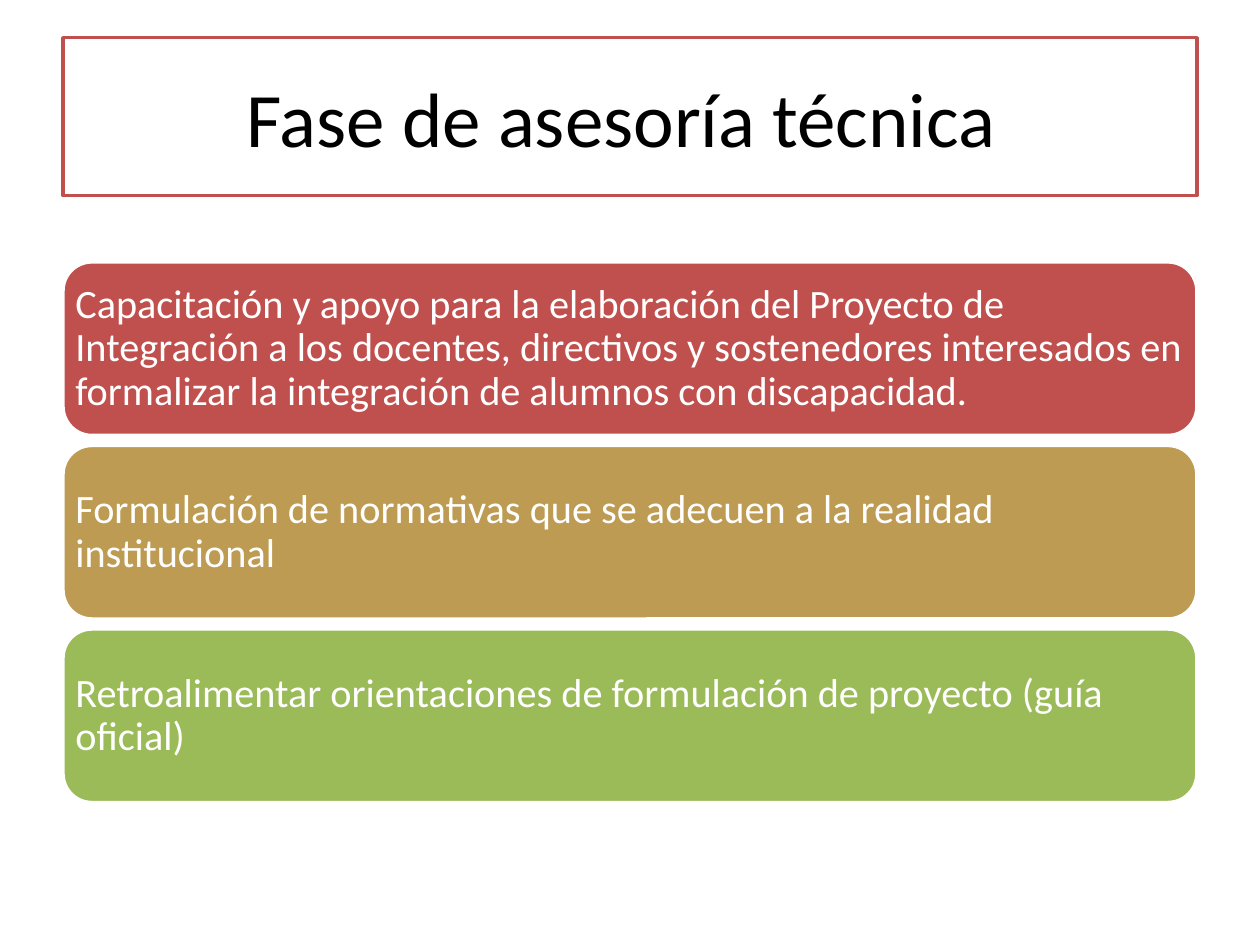
from pptx import Presentation
from pptx.dml.color import RGBColor
from pptx.enum.shapes import MSO_SHAPE
from pptx.enum.text import MSO_ANCHOR, PP_ALIGN
from pptx.util import Cm, Pt

HUES = {
    "white": "FFFFFF",
    "black": "000000",
    "red": "C0504D",
    "gold": "BD9B53",
    "green": "9BBB59",
}
LEFT, WIDTH = 1.27, 22.86
TOP, HEIGHT, PITCH = 5.28, 3.5, 3.7

CARDS = [
    ("red", "Capacitación y apoyo para la elaboración del Proyecto de "
            "Integración a los docentes, directivos y sostenedores interesados "
            "en formalizar la integración de alumnos con discapacidad."),
    ("gold", "Formulación de normativas que se adecuen a la realidad institucional"),
    ("green", "Retroalimentar orientaciones de formulación de proyecto (guía oficial)"),
]


def paint(shape, fill, line):
    shape.fill.solid()
    shape.fill.fore_color.rgb = RGBColor.from_string(HUES[fill])
    shape.line.color.rgb = RGBColor.from_string(HUES[line])
    shape.line.width = Pt(2)


def write(shape, text, size, hue, align):
    frame = shape.text_frame
    frame.word_wrap = True
    frame.vertical_anchor = MSO_ANCHOR.MIDDLE
    para = frame.paragraphs[0]
    para.alignment = align
    run = para.add_run()
    run.text = text
    run.font.name = "Calibri"
    run.font.size = Pt(size)
    run.font.color.rgb = RGBColor.from_string(HUES[hue])
    return para


deck = Presentation()
deck.slide_width, deck.slide_height = Cm(25.4), Cm(19.05)
slide = deck.slides.add_slide(deck.slide_layouts[5])

title = slide.shapes.title
title.left, title.top = Cm(LEFT), Cm(0.76)
title.width, title.height = Cm(WIDTH), Cm(3.18)
paint(title, "white", "red")
write(title, "Fase de asesoría técnica ", 44, "black", PP_ALIGN.CENTER)

for row, (hue, text) in enumerate(CARDS):
    card = slide.shapes.add_shape(
        MSO_SHAPE.ROUNDED_RECTANGLE,
        Cm(LEFT), Cm(TOP + row * PITCH), Cm(WIDTH), Cm(HEIGHT))
    card.shadow.inherit = False
    paint(card, hue, "white")
    # The rounded corners already push the text inwards.
    frame = card.text_frame
    frame.margin_left = frame.margin_right = Cm(0.08)
    frame.margin_top = frame.margin_bottom = Cm(0.08)
    para = write(card, text, 23, "white", PP_ALIGN.LEFT)
    para.line_spacing = 0.9

deck.save("out.pptx")
